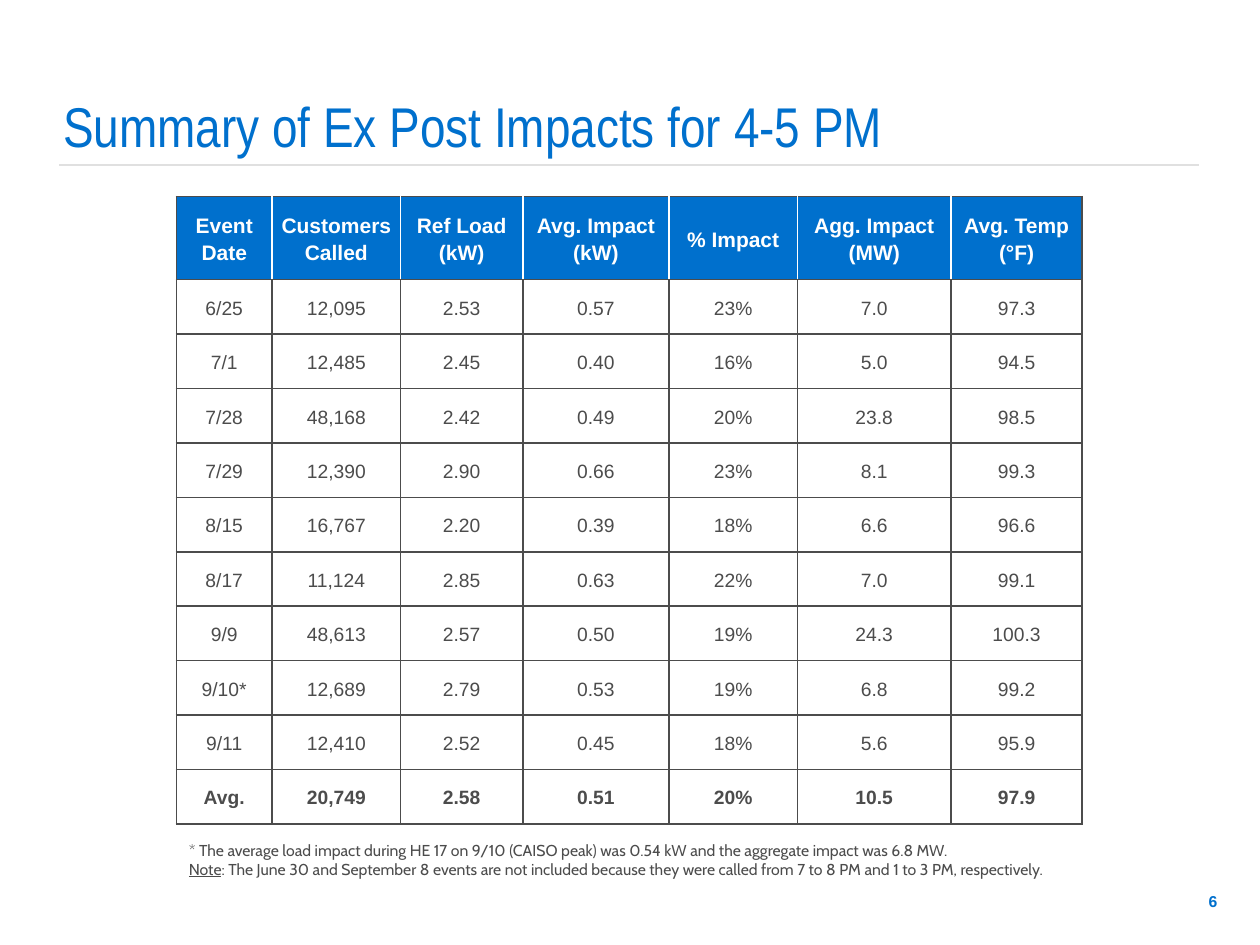
from lxml import etree
from pptx import Presentation
from pptx.dml.color import RGBColor
from pptx.enum.shapes import MSO_CONNECTOR
from pptx.enum.text import MSO_ANCHOR, PP_ALIGN
from pptx.oxml.ns import qn
from pptx.util import Inches, Pt

STRAIGHT = MSO_CONNECTOR.STRAIGHT
MIDDLE, BOTTOM = MSO_ANCHOR.MIDDLE, MSO_ANCHOR.BOTTOM
LEFT, CENTER, RIGHT = PP_ALIGN.LEFT, PP_ALIGN.CENTER, PP_ALIGN.RIGHT

BLUE = RGBColor(0x00, 0x70, 0xCD)
GRAY = RGBColor(0x4C, 0x4C, 0x4C)
RULE = RGBColor(0xE0, 0xE0, 0xE0)
WHITE = RGBColor(0xFF, 0xFF, 0xFF)

COL_WIDTHS = [0.76, 1.02, 0.97, 1.16, 1.02, 1.22, 1.04]
HEADER_HEIGHT = 0.66
HEADERS = ["Event Date", "Customers Called", "Ref Load (kW)", "Avg. Impact (kW)",
           "% Impact", "Agg. Impact (MW)", "Avg. Temp (°F)"]
EVENTS = [
    ["6/25", "12,095", "2.53", "0.57", "23%", "7.0", "97.3"],
    ["7/1", "12,485", "2.45", "0.40", "16%", "5.0", "94.5"],
    ["7/28", "48,168", "2.42", "0.49", "20%", "23.8", "98.5"],
    ["7/29", "12,390", "2.90", "0.66", "23%", "8.1", "99.3"],
    ["8/15", "16,767", "2.20", "0.39", "18%", "6.6", "96.6"],
    ["8/17", "11,124", "2.85", "0.63", "22%", "7.0", "99.1"],
    ["9/9", "48,613", "2.57", "0.50", "19%", "24.3", "100.3"],
    ["9/10*", "12,689", "2.79", "0.53", "19%", "6.8", "99.2"],
    ["9/11", "12,410", "2.52", "0.45", "18%", "5.6", "95.9"],
]
AVERAGE = ["Avg.", "20,749", "2.58", "0.51", "20%", "10.5", "97.9"]


def add_run(p, text, size, font, color, bold=False, underline=False):
    r = p.add_run()
    r.text = text
    r.font.size = Pt(size)
    r.font.name = font
    r.font.color.rgb = color
    r.font.bold = bold
    r.font.underline = underline


def add_text_box(s, box, anchor, align=LEFT, left_inset=0.1):
    """Add an empty wrapping text box and return its text frame."""
    tf = s.shapes.add_textbox(*map(Inches, box)).text_frame
    tf.word_wrap = True
    tf.vertical_anchor = anchor
    tf.margin_left = Inches(left_inset)
    tf.paragraphs[0].alignment = align
    return tf


def add_title(s, box):
    tf = add_text_box(s, box, BOTTOM, left_inset=0)
    add_run(tf.paragraphs[0], "Summary of Ex Post Impacts for 4-5 PM",
            32, "Arial Narrow", BLUE)


def add_title_rule(s, left, right, y):
    line = s.shapes.add_connector(
        STRAIGHT, Inches(left), Inches(y), Inches(right), Inches(y))
    line.line.color.rgb = RULE
    line.line.width = Pt(0.75)
    etree.SubElement(line._element.spPr, qn("a:effectLst"))


def set_borders(cell, left, right):
    """Draw 1 pt borders; top and bottom are always gray."""
    tc_pr = cell._tc.get_or_add_tcPr()
    for side, color in (("L", left), ("R", right), ("T", GRAY), ("B", GRAY)):
        ln = etree.SubElement(tc_pr, qn(f"a:ln{side}"), w=str(Pt(1)))
        fill = etree.SubElement(ln, qn("a:solidFill"))
        etree.SubElement(fill, qn("a:srgbClr"), val=str(color))


def fill_cell(cell, text, size, color, bold):
    cell.vertical_anchor = MIDDLE
    cell.margin_left = cell.margin_right = Inches(0.07)
    cell.margin_top = cell.margin_bottom = 0
    p = cell.text_frame.paragraphs[0]
    p.alignment = CENTER
    p.line_spacing = 1.15
    add_run(p, text, size, "Arial", color, bold)


def add_impact_table(s, box):
    rows = [HEADERS, *EVENTS, AVERAGE]
    last_row, last_col = len(rows) - 1, len(HEADERS) - 1
    table = s.shapes.add_table(
        len(rows), len(HEADERS), *map(Inches, box)).table
    table.first_row = table.horz_banding = False
    for column, width in zip(table.columns, COL_WIDTHS):
        column.width = Inches(width)
    body_height = (box[3] - HEADER_HEIGHT) / last_row
    for i, values in enumerate(rows):
        header = i == 0
        table.rows[i].height = Inches(HEADER_HEIGHT if header else body_height)
        inner = WHITE if header else GRAY
        for j, text in enumerate(values):
            cell = table.cell(i, j)
            fill_cell(cell, text, 12 if header else 11,
                      WHITE if header else GRAY, i in (0, last_row))
            set_borders(cell, GRAY if j == 0 else inner,
                        GRAY if j == last_col else inner)
            if header:
                cell.fill.solid()
                cell.fill.fore_color.rgb = BLUE
            else:
                cell.fill.background()


def add_footnotes(s, box):
    tf = add_text_box(s, box, MIDDLE)
    style = (9, "Cabin", GRAY)
    add_run(tf.paragraphs[0],
            "* The average load impact during HE 17 on 9/10 (CAISO peak) was "
            "0.54 kW and the aggregate impact was 6.8 MW.", *style)
    p = tf.add_paragraph()
    add_run(p, "Note", *style, underline=True)
    add_run(p, ": The June 30 and September 8 events are not included because "
            "they were called from 7 to 8 PM and 1 to 3 PM, respectively.", *style)


def add_page_number(s, box):
    tf = add_text_box(s, box, MIDDLE, RIGHT)
    add_run(tf.paragraphs[0], "6", 9, "Arial", BLUE, bold=True)


def main():
    prs = Presentation()
    prs.slide_width, prs.slide_height = Inches(10), Inches(7.5)
    s = prs.slides.add_slide(prs.slide_layouts[6])
    add_title_rule(s, 0.47, 9.52, 1.31)
    add_page_number(s, (9.11, 6.95, 0.65, 0.4))
    add_title(s, (0.5, 0.57, 9.01, 0.74))
    add_impact_table(s, (1.4, 1.56, 7.19, 4.98))
    add_footnotes(s, (1.4, 6.62, 7.19, 0.4))
    prs.save("out.pptx")


if __name__ == "__main__":
    main()
